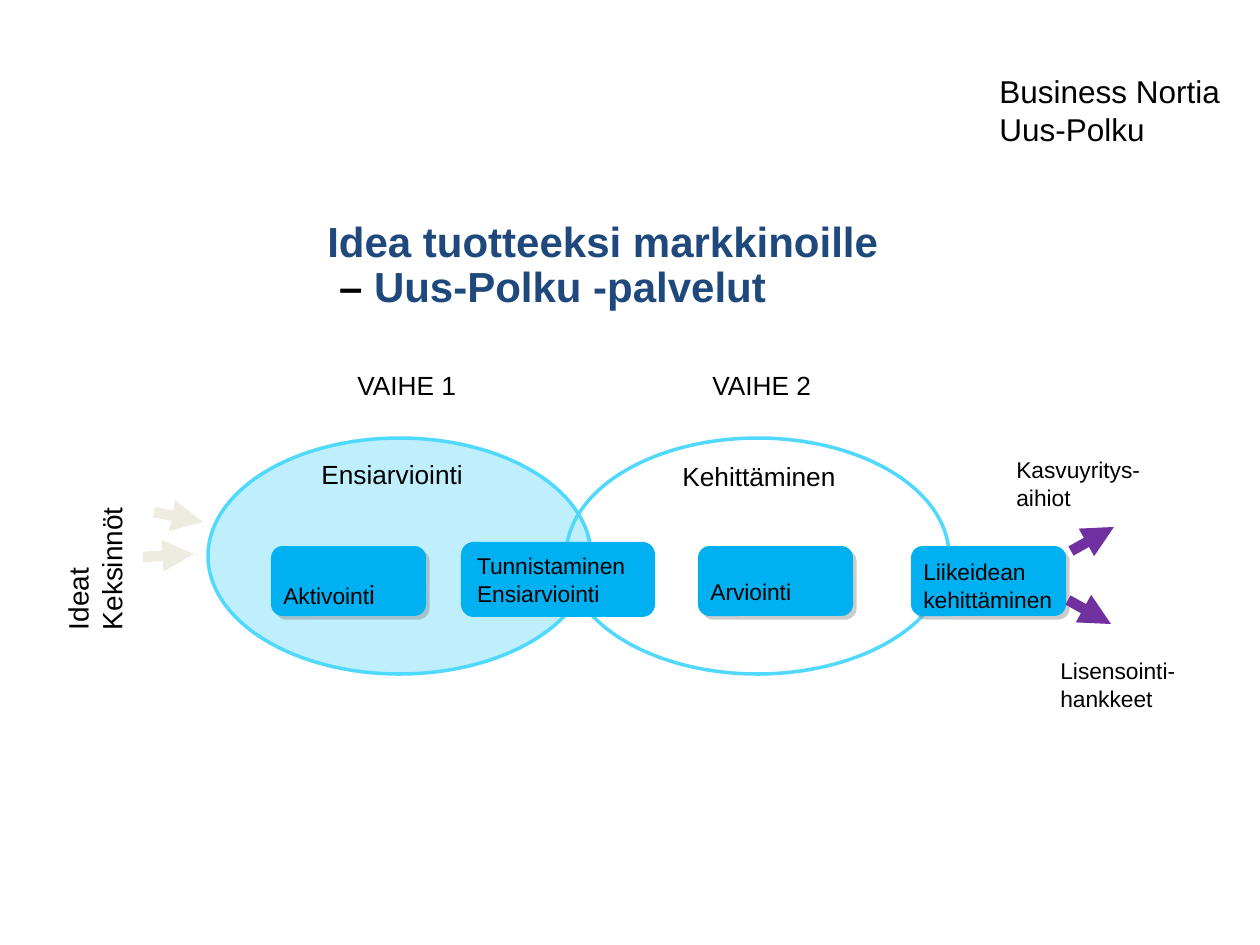
from dataclasses import dataclass
from typing import Optional

import lxml.etree
import pptx
import pptx.dml.color
import pptx.enum.shapes
import pptx.enum.text
import pptx.oxml.ns
import pptx.util

PX = 914400 / 126  # EMU per px
FONT = "Arial"
SERVICE = "Uus-Polku"
COLORS = {
    "text": "000000",
    "title": "1F497D",
    "ring": "50D9FD",
    "pale": "BFEFFD",
    "box": "00B0F0",
    "shadow": "808080",
    "input": "EEECE1",
    "output": "7030A0",
}


@dataclass
class Run:
    text: str
    size: int
    color: str = "text"
    bold: bool = False


@dataclass
class Label:
    x: int
    y: int
    w: int
    h: int
    paragraphs: list[list[Run]]
    wrap: bool = True
    rotation: int = 0
    spacing: Optional[float] = None


@dataclass
class Stage:
    x: int
    y: int
    w: int
    h: int
    shadow: bool = True
    text: str = ""


@dataclass
class Arrow:
    x1: int
    y1: int
    x2: int
    y2: int
    color: str


def px(n: int) -> int:
    return round(n * PX)


def rgb(name: str) -> pptx.dml.color.RGBColor:
    return pptx.dml.color.RGBColor.from_string(COLORS[name])


def sub(parent, tag: str, **attrs: str):
    return lxml.etree.SubElement(parent, pptx.oxml.ns.qn(tag), **attrs)


def write(tf, paragraphs: list[list[Run]], spacing: Optional[float] = None) -> None:
    for i, runs in enumerate(paragraphs):
        p = tf.add_paragraph() if i else tf.paragraphs[0]
        p.alignment = pptx.enum.text.PP_ALIGN.LEFT
        p.line_spacing = spacing
        for run in runs:
            done = len(p.runs)
            if done:
                p.add_run().text = run.text
            else:
                p.text = run.text
            for r in p.runs[done:]:
                r.font.name = FONT
                r.font.size = pptx.util.Pt(run.size)
                r.font.bold = run.bold
                r.font.color.rgb = rgb(run.color)


def add_label(s, label: Label) -> None:
    sp = s.shapes.add_textbox(px(label.x), px(label.y), px(label.w), px(label.h))
    sp.rotation = label.rotation
    sp.text_frame.word_wrap = label.wrap
    write(sp.text_frame, label.paragraphs, label.spacing)


def add_phase(s, x: int, fill: Optional[str]) -> None:
    sp = s.shapes.add_shape(pptx.enum.shapes.MSO_SHAPE.OVAL,
                            px(x), px(438), px(383), px(236))
    sp.shadow.inherit = False
    if fill:
        sp.fill.solid()
        sp.fill.fore_color.rgb = rgb(fill)
    else:
        sp.fill.background()
    sp.line.color.rgb = rgb("ring")
    sp.line.width = pptx.util.Pt(2)


def add_stage(s, stage: Stage) -> None:
    sp = s.shapes.add_shape(pptx.enum.shapes.MSO_SHAPE.ROUNDED_RECTANGLE,
                            px(stage.x), px(stage.y), px(stage.w), px(stage.h))
    sp.shadow.inherit = False
    sp.fill.solid()
    sp.fill.fore_color.rgb = rgb("box")
    sp.line.fill.background()
    if stage.shadow:
        effects = sp._element.spPr.find(pptx.oxml.ns.qn("a:effectLst"))
        shadow = sub(effects, "a:outerShdw", blurRad="0", dist="38100",
                     dir="2700000", algn="tl", rotWithShape="0")
        color = sub(shadow, "a:srgbClr", val=COLORS["shadow"])
        sub(color, "a:alpha", val="40000")
    if stage.text:
        sp.text_frame.vertical_anchor = pptx.enum.text.MSO_ANCHOR.MIDDLE
        write(sp.text_frame, [[Run(stage.text, 13)]])


def add_arrow(s, arrow: Arrow) -> None:
    sp = s.shapes.add_connector(pptx.enum.shapes.MSO_CONNECTOR.STRAIGHT,
                                px(arrow.x1), px(arrow.y1),
                                px(arrow.x2), px(arrow.y2))
    sp.line.color.rgb = rgb(arrow.color)
    sp.line.width = pptx.util.Pt(6)
    sub(sp.line._get_or_add_ln(), "a:tailEnd", type="triangle")
    sub(sp._element.spPr, "a:effectLst")


STAGES = [
    Stage(271, 546, 155, 70),
    Stage(461, 542, 194, 75, shadow=False, text="Tunnistaminen\nEnsiarviointi"),
    Stage(698, 546, 155, 70),
    Stage(911, 546, 155, 70),
]

ARROWS = [
    Arrow(154, 512, 203, 522, "input"),
    Arrow(143, 557, 194, 554, "input"),
    Arrow(1071, 551, 1114, 527, "output"),
    Arrow(1068, 600, 1111, 624, "output"),
]

LABELS = [
    # Inputs and outcomes
    Label(11, 518, 168, 81, [[Run("Ideat Keksinnöt", 16)]], rotation=270),
    Label(1004, 450, 168, 68, [[Run("Kasvuyritys-aihiot", 13)]]),
    Label(1048, 651, 173, 68, [[Run("Lisensointi-hankkeet", 13)]]),
    # Phases
    Label(345, 363, 125, 44, [[Run("VAIHE 1", 15)]], wrap=False),
    Label(700, 363, 125, 44, [[Run("VAIHE 2", 15)]], wrap=False),
    Label(309, 452, 170, 44, [[Run("Ensiarviointi", 15)]], wrap=False),
    Label(670, 454, 180, 44, [[Run("Kehittäminen", 15)]], wrap=False),
    # Stages
    Label(271, 572, 155, 44, [[Run("Aktivoint", 13), Run("i", 15)]]),
    Label(698, 572, 155, 40, [[Run("Arviointi", 13)]]),
    Label(911, 552, 165, 68, [[Run("Liikeidean\nkehittäminen", 13)]]),
    # Title and programme name
    Label(315, 215, 630, 105,
          [[Run("Idea tuotteeksi markkinoille\n ", 24, "title", True),
            Run("– ", 24, "text", True),
            Run(f"{SERVICE} -palvelut", 24, "title", True)]], spacing=0.9),
    Label(987, 66, 267, 89,
          [[Run("Business Nortia", 18)], [Run(SERVICE, 18)]], wrap=False),
]


def main() -> None:
    prs = pptx.Presentation()
    prs.slide_width, prs.slide_height = px(1260), px(945)
    s = prs.slides.add_slide(prs.slide_layouts[6])

    # Overlapping phases, then the stages along them
    add_phase(s, 208, "pale")
    add_phase(s, 566, None)
    for stage in STAGES:
        add_stage(s, stage)
    for arrow in ARROWS:
        add_arrow(s, arrow)
    for label in LABELS:
        add_label(s, label)

    prs.save("out.pptx")


if __name__ == "__main__":
    main()
